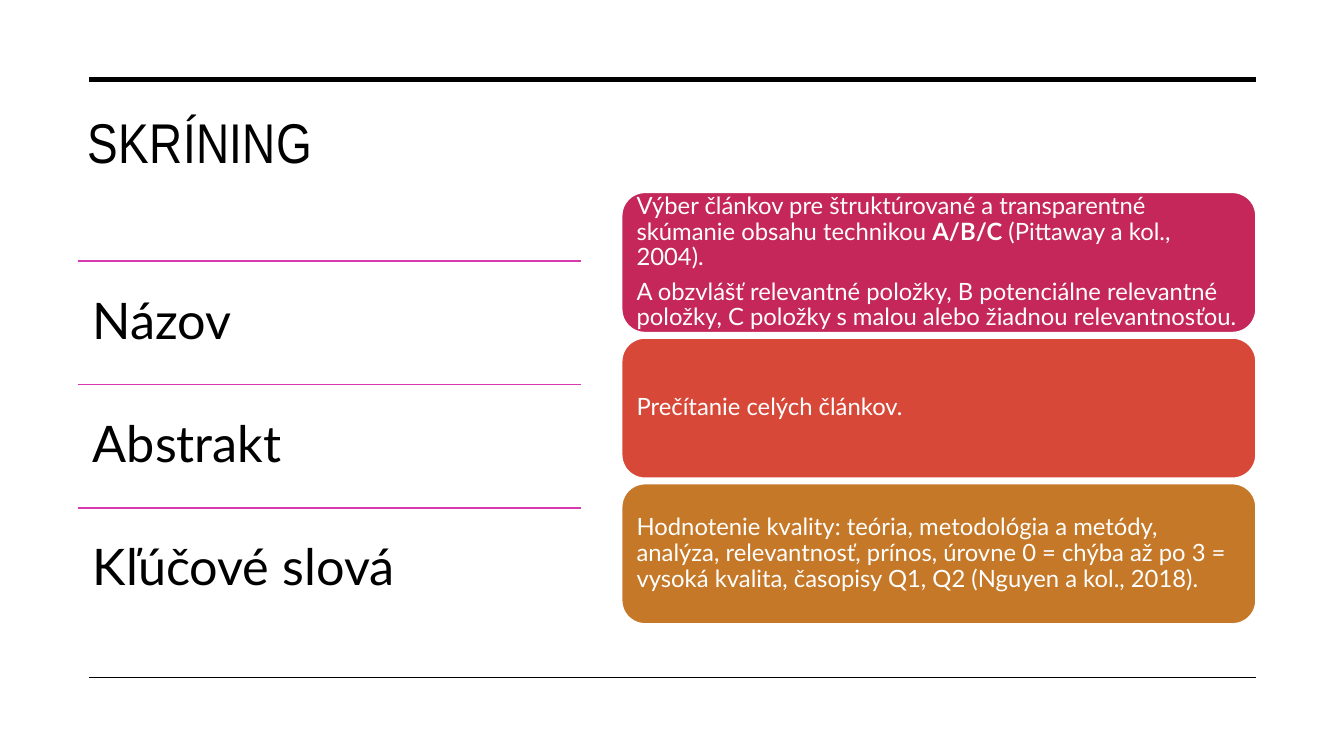
from lxml.etree import SubElement
from pptx import Presentation
from pptx.dml.color import RGBColor
from pptx.enum.shapes import MSO_CONNECTOR as Connector, MSO_SHAPE as Shape
from pptx.enum.text import MSO_ANCHOR as Anchor, PP_ALIGN as Align
from pptx.oxml.ns import qn
from pptx.util import Cm, Pt

BLACK = RGBColor(0x00, 0x00, 0x00)
WHITE = RGBColor(0xFF, 0xFF, 0xFF)
PINK = RGBColor(0xD7, 0x39, 0xAE)
CRIMSON = RGBColor(0xC5, 0x27, 0x5A)
RED = RGBColor(0xD7, 0x48, 0x39)
OCHRE = RGBColor(0xC5, 0x78, 0x27)

SCREENED_PARTS = ["Názov", "Abstrakt", "Kľúčové slová"]

# Each step: fill and paragraphs; a paragraph is a list of (text, bold) runs
STEPS = [
    (CRIMSON, [
        [("Výber článkov pre štruktúrované a transparentné skúmanie obsahu technikou ", False),
         ("A/B/C", True),
         (" (Pittaway a kol., 2004).", False)],
        [("A obzvlášť relevantné položky, B potenciálne relevantné položky, "
          "C položky s malou alebo žiadnou relevantnosťou.", False)],
    ]),
    (RED, [[("Prečítanie celých článkov.", False)]]),
    (OCHRE, [
        [("Hodnotenie kvality: teória, metodológia a metódy, analýza, relevantnosť, "
          "prínos, úrovne 0 = chýba až po 3 = vysoká kvalita, časopisy Q1, Q2 "
          "(Nguyen a kol., 2018).", False)],
    ]),
]


def write(frame, paragraphs, size, color, font="Lato", anchor=Anchor.MIDDLE,
          inset_x=0.0, inset_y=0.0, line_spacing=0.9, space_after=0.0, tracking=0):
    """Fill a text frame with paragraphs of (text, bold) runs."""
    frame.word_wrap = True
    frame.vertical_anchor = anchor
    frame.margin_left = frame.margin_right = Cm(inset_x)
    frame.margin_top = frame.margin_bottom = Cm(inset_y)
    for index, pieces in enumerate(paragraphs):
        paragraph = frame.paragraphs[0] if index == 0 else frame.add_paragraph()
        paragraph.alignment = Align.LEFT
        paragraph.line_spacing = line_spacing
        paragraph.space_after = Pt(space_after)
        for text, bold in pieces:
            run = paragraph.add_run()
            run.text = text
            run.font.name = font
            run.font.size = Pt(size)
            run.font.bold = bold
            run.font.color.rgb = color
            if tracking:
                run._r.get_or_add_rPr().set("spc", str(tracking))


def add_rule(slide, left, right, y, color, weight):
    rule = slide.shapes.add_connector(Connector.STRAIGHT, Cm(left), Cm(y), Cm(right), Cm(y))
    rule.line.color.rgb = color
    rule.line.width = Pt(weight)
    SubElement(rule._element.spPr, qn("a:effectLst"))


def add_label(slide, text, left, top, width, height, **style):
    label = slide.shapes.add_textbox(Cm(left), Cm(top), Cm(width), Cm(height))
    write(label.text_frame, [[(text, False)]], **style)


def add_card(slide, paragraphs, fill, left, top, width, height, **style):
    card = slide.shapes.add_shape(
        Shape.ROUNDED_RECTANGLE, Cm(left), Cm(top), Cm(width), Cm(height))
    card.shadow.inherit = False
    card.fill.solid()
    card.fill.fore_color.rgb = fill
    card.line.color.rgb = WHITE
    card.line.width = Pt(1)
    write(card.text_frame, paragraphs, **style)


def main():
    deck = Presentation()
    deck.slide_width, deck.slide_height = Cm(33.87), Cm(19.05)
    slide = deck.slides.add_slide(deck.slide_layouts[6])

    # Frame rules and title
    add_rule(slide, 2.24, 31.65, 2.01, BLACK, 3.5)
    add_rule(slide, 2.24, 31.65, 17.07, BLACK, 1)
    add_label(slide, "SKRÍNING", 1.96, 2.57, 29.69, 3.12, size=40, color=BLACK,
              font="Arial Narrow", anchor=Anchor.TOP, inset_x=0.25, inset_y=0.13,
              line_spacing=1.0, tracking=30)

    # Left column: the parts that are screened
    list_left, list_width, row_height = 1.96, 12.67, 3.11
    for row, part in enumerate(SCREENED_PARTS):
        top = 6.58 + row * row_height
        add_rule(slide, list_left, list_left + list_width, top, PINK, 1)
        add_label(slide, part, list_left, top, list_width, row_height, size=36,
                  color=BLACK, inset_x=0.38, inset_y=0.38, space_after=12.6)

    # Right column: the steps of the screening
    for row, (fill, paragraphs) in enumerate(STEPS):
        add_card(slide, paragraphs, fill, 15.67, 4.85 + row * 3.67, 15.98, 3.53,
                 size=17, color=WHITE, inset_x=0.2, space_after=6)

    deck.save("out.pptx")


if __name__ == "__main__":
    main()
